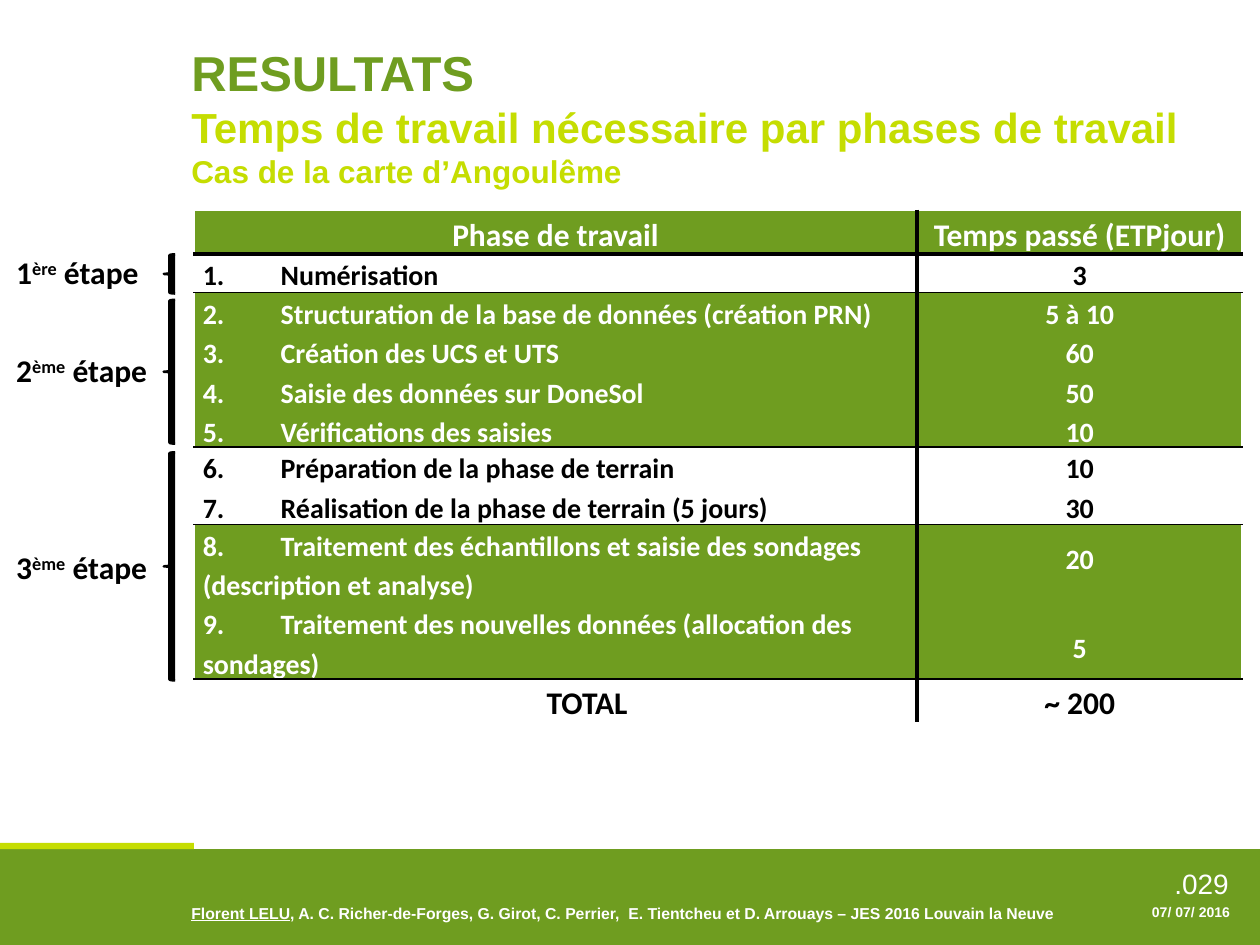
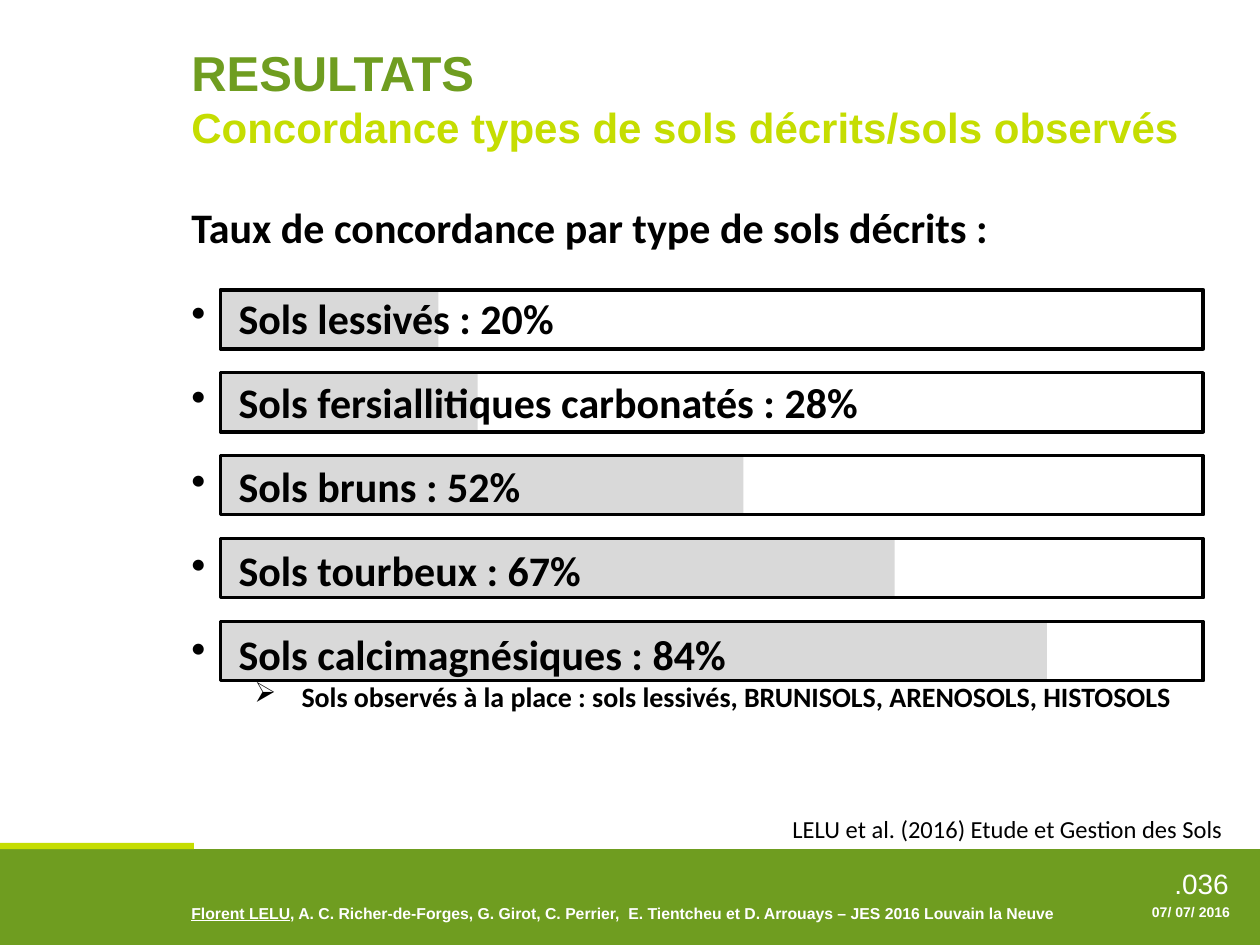
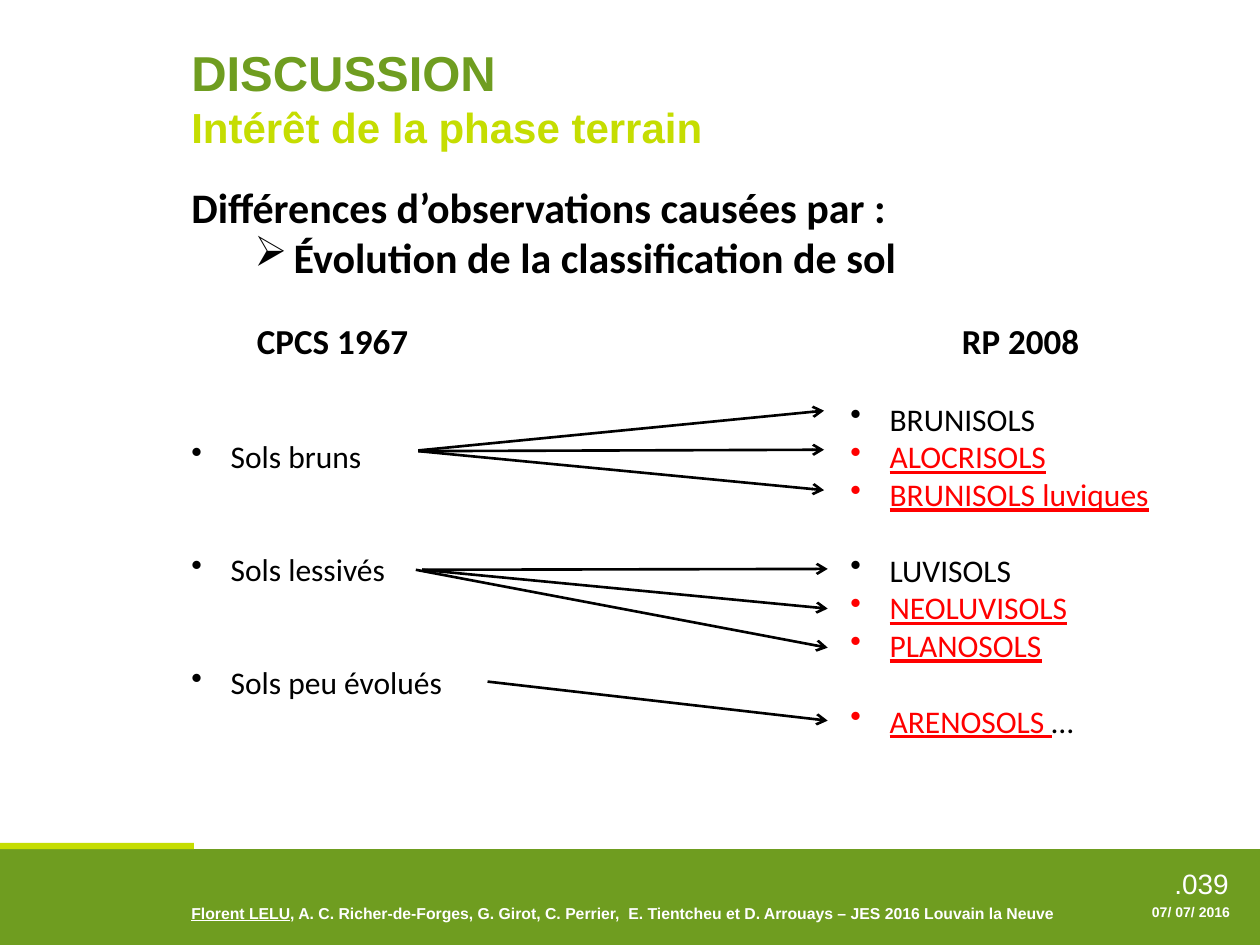
from lxml import etree
from pptx import Presentation
from pptx.dml.color import RGBColor
from pptx.enum import shapes, text
from pptx.oxml import ns
from pptx.util import Pt

HUES = {"green": "6F9D20", "lime": "C5DD01", "white": "FFFFFF",
        "black": "000000", "grey": "D9D9D9", "red": "FF0000"}
RECT = shapes.MSO_SHAPE.RECTANGLE
BRACE = shapes.MSO_SHAPE.LEFT_BRACE
MID, RIGHT = text.PP_ALIGN.CENTER, text.PP_ALIGN.RIGHT
EDGE = 102.24


def place(page, at, kind=None, fill=None, line=None):
    """Add a shape, or a text box when no kind is given."""
    at = [Pt(n) for n in at]
    if kind is None:
        return page.shapes.add_textbox(*at)
    item = page.shapes.add_shape(kind, *at)
    item.shadow.inherit = False
    if fill:
        item.fill.solid()
        item.fill.fore_color.rgb = RGBColor.from_string(HUES[fill])
    else:
        item.fill.background()
    if line:
        item.line.color.rgb = RGBColor.from_string(HUES["black"])
        item.line.width = Pt(line)
    else:
        item.line.fill.background()
    return item


def write(frame, lines, **base):
    """Fill a frame; a line is a string or (runs, paragraph format)."""
    frame.word_wrap = True
    for i, line in enumerate(lines):
        runs, form = (line, {}) if isinstance(line, str) else line
        para = frame.paragraphs[0] if i == 0 else frame.add_paragraph()
        para.alignment = form.get("align", base.get("align", text.PP_ALIGN.LEFT))
        if "gap" in form:
            para.space_before = Pt(form["gap"])
        if "lead" in base:
            para.line_spacing = base["lead"]
        props = para._p.get_or_add_pPr()
        if "hang" in form:
            left, first = form["hang"]
            props.set("marL", str(Pt(left)))
            props.set("indent", str(Pt(first)))
        if "mark" in form:
            etree.SubElement(props, ns.qn("a:buChar")).set("char", form["mark"])
        if "tab" in base:
            tabs = etree.SubElement(props, ns.qn("a:tabLst"))
            stop = etree.SubElement(tabs, ns.qn("a:tab"))
            stop.set("pos", str(Pt(base["tab"])))
            stop.set("algn", "l")
        for words, own in [(runs, {})] if isinstance(runs, str) else runs:
            look = {**base, **form, **own}
            run = para.add_run()
            run.text = words
            font = run.font
            font.color.rgb = RGBColor.from_string(HUES[look.get("hue", "black")])
            font.size = Pt(look["size"])
            for key, value in {"name": look.get("name", "Calibri"),
                               "bold": look.get("bold", False),
                               "underline": look.get("under", False)}.items():
                setattr(font, key, value)
            if "raise" in look:
                font._element.set("baseline", str(look["raise"] * 1000))


deck = Presentation()
deck.slide_width, deck.slide_height = Pt(720), Pt(540)

# Bands, footers and titles
heads = [
    (".029", "RESULTATS", 607.7, 58.3,
     ["Temps de travail nécessaire par phases de travail",
      ("Cas de la carte d’Angoulême", {"size": 18})]),
    (".036", "RESULTATS", 617.8, 36,
     ["Concordance types de sols décrits/sols observés"]),
    (".039", "DISCUSSION", 532.8, 36, ["Intérêt de la phase terrain"]),
]
pages = []
for number, title, wide, high, subs in heads:
    page = deck.slides.add_slide(deck.slide_layouts[6])
    pages.append(page)
    place(page, (0, 485.3, 720, 54.7), RECT, "green")
    place(page, (0, 481.7, 110.9, 3.6), RECT, "lime")
    write(place(page, (620.6, 491.8, 88.6, 19.4)).text_frame, [number],
          name="Arial", size=16, hue="white", align=RIGHT)
    for at, lines, size, hue in [
            ((EDGE, 54.7, wide, high), subs, 24, "lime"),
            ((EDGE, 20.9, 532.8, 41), [title], 28, "green")]:
        box = place(page, at, RECT, "white")
        box.text_frame.vertical_anchor = text.MSO_ANCHOR.TOP
        write(box.text_frame, lines, name="Arial", size=size, hue=hue, bold=True)
    write(place(page, (EDGE, 512.6, 547.2, 18)).text_frame,
          [([("Florent LELU", {"under": True}),
             (", A. C. Richer-de-Forges, G. Girot, C. Perrier,  E. Tientcheu"
              " et D. Arrouays – JES 2016 Louvain la Neuve", {})], {})],
          name="Arial", size=9, hue="white", bold=True)
    write(place(page, (560.2, 512.6, 149.8, 17.3)).text_frame, ["07/ 07/ 2016"],
          name="Arial", size=8, hue="white", bold=True, align=RIGHT)
work, rates, field = pages

# Working time table
rows = [
    (25, 18, ["Phase de travail"], ["Temps passé (ETPjour)"]),
    (22, 16, ["1.\tNumérisation"], ["3"]),
    (88, 16, ["2.\tStructuration de la base de données (création PRN)",
              "3.\tCréation des UCS et UTS",
              "4.\tSaisie des données sur DoneSol",
              "5.\tVérifications des saisies"], ["5 à 10", "60", "50", "10"]),
    (44, 16, ["6.\tPréparation de la phase de terrain",
              "7.\tRéalisation de la phase de terrain (5 jours)"], ["10", "30"]),
    (88.5, 16, ["8.\tTraitement des échantillons et saisie des sondages "
                "(description et analyse)",
                "9.\tTraitement des nouvelles données (allocation des sondages)"],
     ["20", ("5", {"gap": 28.5})]),
    (24.6, 18, [("TOTAL", {"hang": (36, 0)})], ["~ 200"]),
]
rules = [("white", 1), ("black", 2.25)] + [("black", 1)] * 4 + [("white", 1)]
walls = [("white", 1), ("black", 2.25), ("white", 1)]
grid = work.shapes.add_table(6, 2, Pt(110.9), Pt(120.2), Pt(599), Pt(292.1)).table
for c, wide in enumerate((413.2, 185.8)):
    grid.columns[c].width = Pt(wide)
for r, (high, size, *cells) in enumerate(rows):
    grid.rows[r].height = Pt(high)
    for c, lines in enumerate(cells):
        cell = grid.cell(r, c)
        cell.margin_left = cell.margin_right = Pt(5)
        cell.margin_top = cell.margin_bottom = 0
        cell.vertical_anchor = text.MSO_ANCHOR.MIDDLE
        for side, (hue, thick) in zip("LRTB", (walls[c], walls[c + 1],
                                               rules[r], rules[r + 1])):
            edge = etree.SubElement(cell._tc.get_or_add_tcPr(), ns.qn("a:ln" + side))
            edge.set("w", str(Pt(thick)))
            paint = etree.SubElement(edge, ns.qn("a:solidFill"))
            etree.SubElement(paint, ns.qn("a:srgbClr")).set("val", HUES[hue])
        shade, ink = ("white", "black") if r % 2 else ("green", "white")
        cell.fill.solid()
        cell.fill.fore_color.rgb = RGBColor.from_string(HUES[shade])
        form = {"align": MID} if c or size == 18 else {"tab": 44.5}
        write(cell.text_frame, lines, size=size, hue=ink, bold=True, lead=1.15, **form)

for step, tail, top, high, label in [("1", "ère", 145.4, 22.3, 141.1),
                                     ("2", "ème", 171.4, 82.1, 197.3),
                                     ("3", "ème", 258.5, 130.3, 309.6)]:
    place(work, (93.6, top, 6.5, high), BRACE, "black", 1.5)
    write(place(work, (2.2, label, 103, 28.8)).text_frame,
          [([(step, {}), (tail, {"raise": 30}), (" étape", {})], {})],
          size=18, bold=True)

# Match rates by soil type
soils = [("Sols lessivés : 20%", 125.3),
         ("Sols fersiallitiques carbonatés : 28%", 147.6),
         ("Sols bruns : 52%", 299.5),
         ("Sols tourbeux : 67%", 385.9),
         ("Sols calcimagnésiques : 84%", 473)]
lines = ["Taux de concordance par type de sols décrits :"]
for i, (soil, wide) in enumerate(soils):
    top = 165.6 + 47.4 * i
    place(rates, (125.3, top + 0.5, wide, 33.8), RECT, "grey")
    place(rates, (126, top, 561.6, 33.8), RECT, line=2)
    lines.append((soil, {"mark": "•", "hang": (27, -27), "gap": 19.2 if i else 23.5}))
lines.append(("Sols observés à la place : sols lessivés, BRUNISOLS, ARENOSOLS, HISTOSOLS",
              {"mark": "➢", "hang": (63, -27), "size": 16}))
write(place(rates, (EDGE, 111.6, 607.7, 332)).text_frame, lines, size=24, bold=True)
write(place(rates, (445.7, 461.5, 265, 24.5)).text_frame,
      ["LELU et al. (2016) Etude et Gestion des Sols"], size=14)

# Change of soil classes
write(place(field, (EDGE, 100.1, 603.4, 94.3)).text_frame,
      ["Différences d’observations causées par :",
       ("Évolution de la classification de sol",
        {"mark": "➢", "hang": (58.5, -22.5)})], size=24, bold=True)
dot = {"mark": "•", "hang": (22.5, -22.5)}
new = {"hue": "red", "under": True}
head = {"size": 20, "bold": True, "align": MID}
write(place(field, (EDGE, 179.3, 175.7, 227.5)).text_frame,
      [("CPCS 1967", head)]
      + [(soil, {**dot, "gap": 43}) for soil in
         ("Sols bruns", "Sols lessivés", "Sols peu évolués")], size=18)
write(place(field, (478.8, 179.3, 208.8, 249.8)).text_frame,
      [("RP 2008", head),
       ("BRUNISOLS", {**dot, "gap": 21.5}),
       ("ALOCRISOLS", {**dot, **new}),
       ("BRUNISOLS luviques", {**dot, **new}),
       ("LUVISOLS", {**dot, "gap": 21.5}),
       ("NEOLUVISOLS", {**dot, **new}),
       ("PLANOSOLS", {**dot, **new}),
       ([("ARENOSOLS ", new), ("…", {})], {**dot, "gap": 21.5})], size=18)

for ends in [(239, 257.4, 470.9, 234.7), (239, 257.8, 470.9, 257),
             (239, 257.8, 470.9, 280.1), (241.2, 325.6, 473, 325.1),
             (241.2, 325.6, 473, 347.8), (237.6, 325.6, 473, 370.1),
             (278.6, 389.5, 473, 411.8)]:
    arrow = field.shapes.add_connector(shapes.MSO_CONNECTOR.STRAIGHT,
                                       *[Pt(n) for n in ends])
    arrow.line.color.rgb = RGBColor.from_string(HUES["black"])
    arrow.line.width = Pt(1.5)
    etree.SubElement(arrow.line._get_or_add_ln(), ns.qn("a:tailEnd")).set("type", "arrow")
    etree.SubElement(arrow._element.spPr, ns.qn("a:effectLst"))

deck.save("out.pptx")
